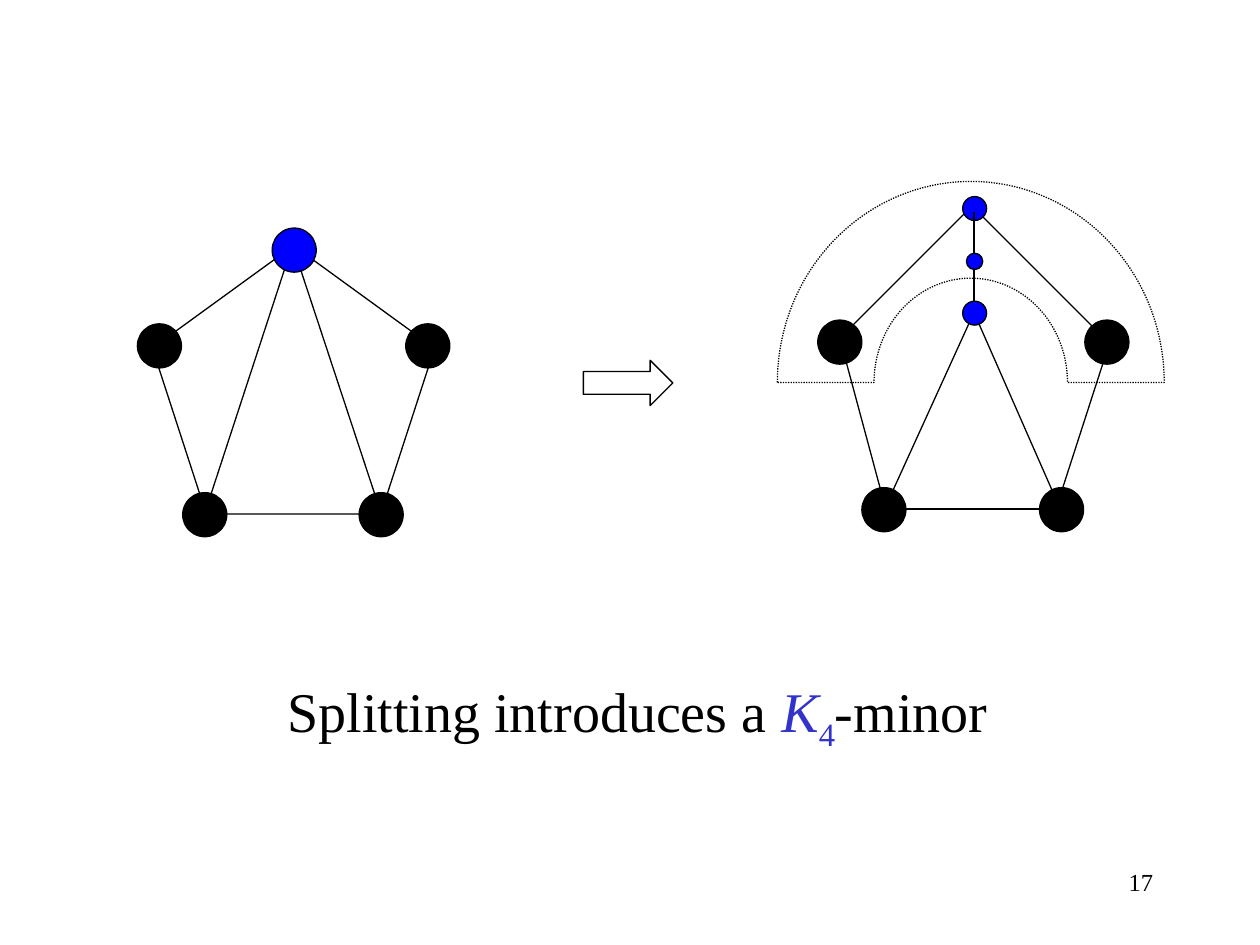
"""Build a slide showing how splitting a vertex of a graph introduces a minor."""
from dataclasses import dataclass

from lxml.etree import SubElement
from pptx import Presentation
from pptx.dml.color import RGBColor as RGB
from pptx.enum.dml import MSO_LINE as Dash
from pptx.enum.shapes import MSO_CONNECTOR as Link, MSO_SHAPE as Kind
from pptx.enum.text import PP_ALIGN as Align
from pptx.oxml.ns import qn
from pptx.util import Inches, Pt


@dataclass(frozen=True)
class Theme:
    font: str = "Times New Roman"
    black: RGB = RGB(0, 0, 0)
    blue: RGB = RGB(0, 0, 255)
    accent: RGB = RGB(0x33, 0x33, 0xCC)
    large: Pt = Pt(32)
    small: Pt = Pt(14)
    line: Pt = Pt(0.75)


theme = Theme()
deck = Presentation()
deck.slide_width, deck.slide_height = Inches(10), Inches(7.5)
slide = deck.slides.add_slide(deck.slide_layouts[6])


def write(para, text, size=theme.large, color=theme.black, italic=False, base=0):
    run = para.add_run()
    run.text = text
    font = run.font
    font.name, font.size, font.italic = theme.font, size, italic
    font.color.rgb = color
    if base:
        run._r.get_or_add_rPr().set("baseline", str(base * 1000))


def draw(kind, box, fill=None):
    shape = slide.shapes.add_shape(kind, *map(Inches, box))
    shape.shadow.inherit = False
    shape.line.color.rgb, shape.line.width = theme.black, theme.line
    if fill is None:
        shape.fill.background()
    else:
        shape.fill.solid()
        shape.fill.fore_color.rgb = fill
    return shape


draw(Kind.RIGHT_ARROW, (4.63, 2.86, 0.71, 0.36))

node = 0.35
left = [(3.22, 2.57), (2.85, 3.91), (1.45, 3.91), (1.09, 2.57)]
right = [(8.61, 2.54), (8.25, 3.87), (6.84, 3.87), (6.49, 2.54)]
for x, y in left + right:
    draw(Kind.OVAL, (x, y, node, node), theme.black)
draw(Kind.REGULAR_PENTAGON, (1.21, 1.95, 2.24, 2.13))

half = 180 * 60000 / 100000
arc = draw(Kind.BLOCK_ARC, (6.17, 1.44, 3.07, 3.19))
arc.adjustments[0], arc.adjustments[1], arc.adjustments[2] = half, 0, 0.25
arc.line.dash_style = Dash.ROUND_DOT

stages = [
    ([(2.31, 1.98, 1.62, 4.09), (3.03, 4.09, 2.33, 1.97)], (2.16, 1.81, node)),
    ([(6.96, 4.04, 8.38, 4.04), (6.68, 2.74, 7.03, 4.04),
      (7.67, 1.68, 6.61, 2.74), (7.73, 1.65, 8.77, 2.69),
      (8.8, 2.74, 8.38, 4.04)], (7.64, 1.56, 0.19)),
    ([(7.73, 1.68, 7.73, 2.5)], (7.67, 2.01, 0.13)),
    ([(7.73, 2.48, 7.02, 4.04), (7.73, 2.48, 8.42, 4.05)], (7.64, 2.39, 0.19)),
]
for edges, (x, y, size) in stages:
    for ends in edges:
        edge = slide.shapes.add_connector(Link.STRAIGHT, *map(Inches, ends))
        edge.line.color.rgb, edge.line.width = theme.black, theme.line
        SubElement(edge._element.spPr, qn("a:effectLst"))
    draw(Kind.OVAL, (x, y, size, size), theme.blue)

texts = [
    ((2.1, 5.32, 5.92, 0.63), Align.CENTER, [
        ("Splitting introduces a ", {}),
        ("K", {"color": theme.accent, "italic": True}),
        ("4", {"color": theme.accent, "base": -25}),
        ("-minor", {}),
    ]),
    ((7.17, 6.83, 2.08, 0.5), Align.RIGHT, [("17", {"size": theme.small})]),
]
for box, align, runs in texts:
    frame = slide.shapes.add_textbox(*map(Inches, box)).text_frame
    frame.word_wrap = True
    para = frame.paragraphs[0]
    para.alignment = align
    for text, style in runs:
        write(para, text, **style)

deck.save("out.pptx")
